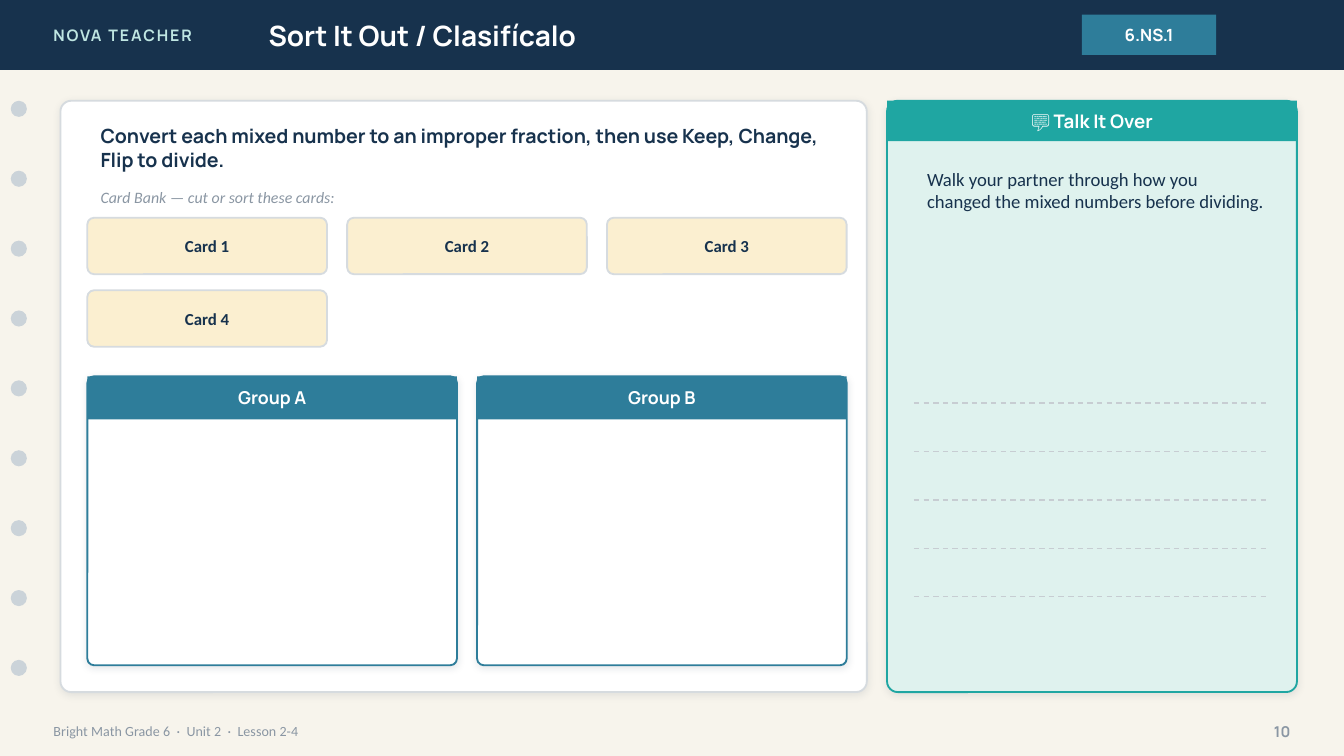
from lxml import etree
from pptx import Presentation
from pptx.dml.color import RGBColor
from pptx.enum.dml import MSO_LINE
from pptx.enum.shapes import MSO_CONNECTOR, MSO_SHAPE
from pptx.enum.text import MSO_ANCHOR, PP_ALIGN
from pptx.oxml.ns import qn
from pptx.util import Inches, Pt

RECT, ROUND, OVAL = MSO_SHAPE.RECTANGLE, MSO_SHAPE.ROUNDED_RECTANGLE, MSO_SHAPE.OVAL
LEFT, CENTER, RIGHT = PP_ALIGN.LEFT, PP_ALIGN.CENTER, PP_ALIGN.RIGHT
TOP, MIDDLE = MSO_ANCHOR.TOP, MSO_ANCHOR.MIDDLE
STRAIGHT, DASH = MSO_CONNECTOR.STRAIGHT, MSO_LINE.DASH

HEAD, BODY = "Manrope", "Calibri"
NAVY, BLUE, TEAL, MINT = "17324D", "2E7D9A", "1FA6A2", "DFF2EE"
WHITE, CREAM, CARD, AQUA = "FFFFFF", "F7F4EC", "FBEFD0", "BFE6E2"
GREY, BORDER, HOLE, RULE, SHADOW = "8A96A3", "D6DBDF", "CBD3D9", "C7CDD2", "1C2E42"

BRAND = "NOVA TEACHER"
TITLE = "Sort It Out / Clasifícalo"
STANDARD = "6.NS.1"
FOOTER = "Bright Math Grade 6  ·  Unit 2  ·  Lesson 2-4"
PAGE = "10"
TASK = ("Convert each mixed number to an improper fraction, "
        "then use Keep, Change, Flip to divide.")
BANK = "Card Bank — cut or sort these cards:"
CARDS = ["Card 1", "Card 2", "Card 3", "Card 4"]
GROUPS = ["Group A", "Group B"]
TALK_TITLE = "💬 Talk It Over"
TALK = "Walk your partner through how you changed the mixed numbers before dividing."

W = 10
H = W * 9 / 16
BAR_H = 0.52
MAIN_X, MAIN_Y, MAIN_W, MAIN_H = 0.45, 0.75, 6, 4.4
TALK_X, TALK_W = 6.6, 3.05
GRID_X, GRID_W, GAP = 0.65, 5.65, 0.15
CARD_Y, CARD_H, CARD_STEP, CARD_COLS = 1.62, 0.42, 0.54, 3
GROUP_Y, GROUP_H = 2.8, 2.15
HOLES, HOLE_SIZE = 9, 0.12
RULES, RULE_X, RULE_Y, RULE_W, RULE_STEP = 5, 6.8, 3, 2.65, 0.36

prs = Presentation()
prs.slide_width, prs.slide_height = Inches(W), Inches(H)
s = prs.slides.add_slide(prs.slide_layouts[6])


def rgb(value):
    return RGBColor.from_string(value)


def column_width(count):
    return (GRID_W - GAP * (count - 1)) / count


def write(sp, text, size, color, font=HEAD, align=LEFT, anchor=MIDDLE,
          bold=False, italic=False, spacing=0):
    tf = sp.text_frame
    tf.word_wrap = True
    tf.vertical_anchor = anchor
    p = tf.paragraphs[0]
    p.alignment = align
    r = p.add_run()
    r.text = text
    r.font.size, r.font.name = Pt(size), font
    r.font.bold, r.font.italic = bold, italic
    r.font.color.rgb = rgb(color)
    if spacing:
        r._r.get_or_add_rPr().set("spc", str(spacing * 100))


def label(x, y, w, h, text, size, color, **style):
    sp = s.shapes.add_textbox(Inches(x), Inches(y), Inches(w), Inches(h))
    write(sp, text, size, color, **style)


def shape(kind, x, y, w, h, fill, line=None, radius=0):
    sp = s.shapes.add_shape(kind, Inches(x), Inches(y), Inches(w), Inches(h))
    sp.shadow.inherit = False
    sp.fill.solid()
    sp.fill.fore_color.rgb = rgb(fill)
    if line:
        sp.line.color.rgb = rgb(line)
        sp.line.width = Pt(1)
    else:
        sp.line.fill.background()
    if radius:
        sp.adjustments[0] = radius / min(w, h)
    return sp


def panel(x, y, w, h, fill, line, radius):
    """Rounded box with a soft shadow below it."""
    sp = shape(ROUND, x, y, w, h, fill, line, radius)
    effects = sp._element.spPr.find(qn("a:effectLst"))
    outer = etree.SubElement(effects, qn("a:outerShdw"), blurRad=str(Pt(4)),
                             dist=str(Pt(1)), dir="5400000", rotWithShape="0")
    color = etree.SubElement(outer, qn("a:srgbClr"), val=SHADOW)
    etree.SubElement(color, qn("a:alpha"), val="10000")


def titled_panel(x, y, w, h, fill, line, radius, title, size, title_h):
    panel(x, y, w, h, fill, line, radius)
    write(shape(RECT, x, y, w, title_h, line), title, size, WHITE,
          align=CENTER, bold=True)


def dashed_rule(x, y, w):
    ln = s.shapes.add_connector(STRAIGHT, Inches(x), Inches(y), Inches(x + w), Inches(y))
    ln.line.color.rgb = rgb(RULE)
    ln.line.width = Pt(0.75)
    ln.line.dash_style = DASH
    etree.SubElement(ln._element.spPr, qn("a:effectLst"))


s.background.fill.solid()
s.background.fill.fore_color.rgb = rgb(CREAM)

# Header, binder holes and footer
shape(RECT, 0, 0, W, BAR_H, NAVY)
label(0.3, 0, 2.4, BAR_H, BRAND, 8.5, AQUA, bold=True, spacing=1)
label(1.9, 0, 5.6, BAR_H, TITLE, 15, WHITE, bold=True)
write(shape(RECT, 8.05, 0.11, 1, 0.3, BLUE), STANDARD, 9, WHITE, align=CENTER, bold=True)
for i in range(HOLES):
    shape(OVAL, 0.08, MAIN_Y + i * BAR_H, HOLE_SIZE, HOLE_SIZE, HOLE)
label(0.3, 5.3, 7, 0.28, FOOTER, 7.5, GREY, font=BODY)
label(9.2, 5.3, 0.5, 0.28, PAGE, 8, GREY, align=RIGHT, bold=True)

# Sorting activity
panel(MAIN_X, MAIN_Y, MAIN_W, MAIN_H, WHITE, BORDER, 0.08)
label(GRID_X, 0.9, 5.6, 0.4, TASK, 10.5, NAVY, bold=True)
label(GRID_X, 1.35, 5.6, 0.24, BANK, 8.5, GREY, font=BODY, italic=True)
card_w = column_width(CARD_COLS)
for i, card in enumerate(CARDS):
    row, col = divmod(i, CARD_COLS)
    sp = shape(ROUND, GRID_X + col * (card_w + GAP), CARD_Y + row * CARD_STEP,
               card_w, CARD_H, CARD, BORDER, 0.05)
    write(sp, card, 9, NAVY, font=BODY, align=CENTER, bold=True)
group_w = column_width(len(GROUPS))
for i, group in enumerate(GROUPS):
    titled_panel(GRID_X + i * (group_w + GAP), GROUP_Y, group_w, GROUP_H,
                 WHITE, BLUE, 0.05, group, 9.5, 0.32)

# Partner talk
titled_panel(TALK_X, MAIN_Y, TALK_W, MAIN_H, MINT, TEAL, 0.08, TALK_TITLE, 10, 0.3)
label(RULE_X, 1.2, 2.7, 1.5, TALK, 10, NAVY, font=BODY, anchor=TOP)
for i in range(RULES):
    dashed_rule(RULE_X, RULE_Y + i * RULE_STEP, RULE_W)

prs.save("out.pptx")
